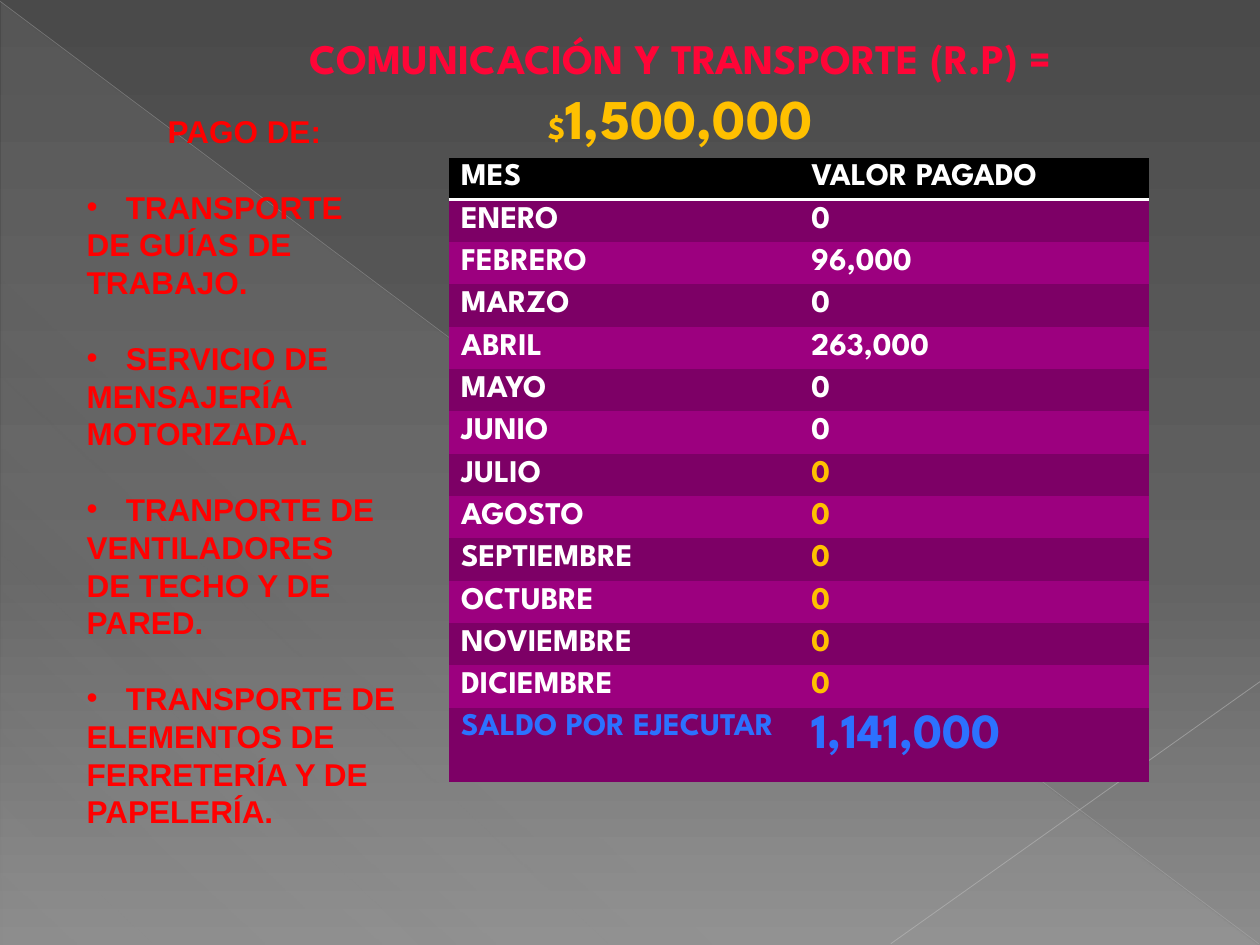
"""Build the slide on transport spending: title, payment list and month table."""
from typing import NamedTuple

from lxml import etree
from pptx import Presentation
from pptx.dml.color import RGBColor
from pptx.enum.shapes import MSO_CONNECTOR, MSO_SHAPE
from pptx.enum.text import MSO_ANCHOR, MSO_AUTO_SIZE, PP_ALIGN
from pptx.oxml.ns import qn
from pptx.util import Inches, Pt

STRAIGHT = MSO_CONNECTOR.STRAIGHT
TRIANGLE = MSO_SHAPE.RIGHT_TRIANGLE
TOP = MSO_ANCHOR.TOP
NO_FIT = MSO_AUTO_SIZE.NONE
CENTER = PP_ALIGN.CENTER
LEFT = PP_ALIGN.LEFT
HEAD_FONT = "League Spartan"
WHITE, GOLD, RED, BLUE = "FFFFFF", "FFC000", "FF0000", "2C71FF"
BLACK, DARK, LIGHT = "000000", "7D0066", "9C007F"
PLAIN_STYLE = "{2D5ABB26-0587-4C30-8999-92F81FD0307C}"
LINE_STEP = Pt(21.6)


class Stop(NamedTuple):
    pos: int
    color: str
    alpha: int = 100


class Ray(NamedTuple):
    start: tuple[float, float]
    end: tuple[float, float]
    color: str
    width: float
    alpha: int


class Row(NamedTuple):
    label: str
    value: str
    fill: str
    ink: str = WHITE
    mark: str = WHITE
    size: int = 18


BACK = [Stop(0, "4A4A4A"), Stop(60, "626262"), Stop(100, "8C8C8C")]
SHEEN = [Stop(0, "D2D2D2", 10), Stop(70, "D2D2D2", 8), Stop(100, "D2D2D2", 1)]
ROSE = [Stop(0, "FF8597"), Stop(75, "FF0537"), Stop(100, "A90042")]
RAYS = [
    Ray((0, 0.01), (9.99, 7.49), "BFBFBF", 0.39, 35),
    Ray((10, 5.41), (7.07, 7.49), "C6C6C6", 0.47, 45),
]
MONTHS = ["ENERO", "FEBRERO", "MARZO", "ABRIL", "MAYO", "JUNIO", "JULIO",
          "AGOSTO", "SEPTIEMBRE", "OCTUBRE", "NOVIEMBRE", "DICIEMBRE"]
PAID = {"FEBRERO": "96,000", "ABRIL": "263,000"}
ROWS = [
    Row("MES", "VALOR PAGADO", BLACK),
    *(Row(month, PAID.get(month, "0"), LIGHT if i % 2 else DARK,
          mark=WHITE if i < 6 else GOLD) for i, month in enumerate(MONTHS)),
    Row("SALDO POR EJECUTAR", "1,141,000", DARK, BLUE, BLUE, 28),
]
ITEMS = [
    ["TRANSPORTE", "DE GUÍAS DE", "TRABAJO."],
    ["SERVICIO DE", "MENSAJERÍA", "MOTORIZADA."],
    ["TRANPORTE DE", "VENTILADORES", "DE TECHO Y DE", "PARED."],
    ["TRANSPORTE DE", "ELEMENTOS DE", "FERRETERÍA Y DE", "PAPELERÍA."],
]


def paint(fill, color: str) -> None:
    fill.solid()
    fill.fore_color.rgb = RGBColor.from_string(color)


def fade(node, alpha: int) -> None:
    etree.SubElement(node, qn("a:alpha"), val=str(alpha * 1000))


def blend(fill, host, stops: list[Stop], angle: int) -> None:
    fill.gradient()
    fill.gradient_angle = 360 - angle
    group = next(host.iter(qn("a:gsLst")))
    for old in list(group):
        group.remove(old)
    for stop in stops:
        node = etree.SubElement(group, qn("a:gs"), pos=str(stop.pos * 1000))
        color = etree.SubElement(node, qn("a:srgbClr"), val=stop.color)
        if stop.alpha < 100:
            fade(color, stop.alpha)


def style(font, size: float, color: str, name: str = HEAD_FONT) -> None:
    font.name, font.size, font.bold = name, Pt(size), True
    paint(font.fill, color)


def add_ray(slide, ray: Ray) -> None:
    ends = [Inches(n) for n in ray.start + ray.end]
    line = slide.shapes.add_connector(STRAIGHT, *ends)
    line.line.width = Pt(ray.width)
    paint(line.line.fill, ray.color)
    props = line.element.spPr
    fade(next(props.iter(qn("a:srgbClr"))), ray.alpha)
    etree.SubElement(props, qn("a:effectLst"))


def add_back(slide) -> None:
    blend(slide.background.fill, slide.element, BACK, 90)
    sheen = slide.shapes.add_shape(
        TRIANGLE, Inches(0.01), Inches(0.02), Inches(9.98), Inches(7.48))
    sheen.shadow.inherit = False
    sheen.line.fill.background()
    blend(sheen.fill, sheen.element, SHEEN, 133)
    for ray in RAYS:
        add_ray(slide, ray)


def rule_off(cell) -> None:
    edge = etree.Element(qn("a:lnB"), w=str(Pt(2)))
    fill = etree.SubElement(edge, qn("a:solidFill"))
    etree.SubElement(fill, qn("a:srgbClr"), val=WHITE)
    cell.fill.solid()
    cell._tc.get_or_add_tcPr().insert(0, edge)


def set_cell(cell, text: str, fill: str, ink: str, size: int) -> None:
    cell.text = text
    style(cell.text_frame.paragraphs[0].font, size, ink)
    paint(cell.fill, fill)


def add_months(slide) -> None:
    frame = slide.shapes.add_table(
        len(ROWS), 2, Inches(3.56), Inches(1.25), Inches(5.56), Inches(4.96))
    table = frame.table
    next(frame.element.iter(qn("a:tableStyleId"))).text = PLAIN_STYLE
    for i, row in enumerate(ROWS):
        table.rows[i].height = Inches(4.37) // 13
        set_cell(table.cell(i, 0), row.label, row.fill, row.ink, 18)
        set_cell(table.cell(i, 1), row.value, row.fill, row.mark, row.size)
    table.rows[len(ROWS) - 1].height = Inches(0.59)
    for cell in table.rows[0].cells:
        rule_off(cell)


def add_title(slide) -> None:
    title = slide.shapes.title
    title.left, title.top = Inches(1.69), Inches(0.21)
    title.width, title.height = Inches(7.42), Inches(1.04)
    frame = title.text_frame
    frame.vertical_anchor, frame.auto_size = TOP, NO_FIT
    frame.word_wrap = True
    para = frame.paragraphs[0]
    para.alignment = CENTER
    parts = [("COMUNICACIÓN Y TRANSPORTE (R.P) = ", 24),
             ("$", 18), ("1,500,000", 32)]
    for text, size in parts:
        run = para.add_run()
        run.text = text
        style(run.font, size, GOLD)
    blend(para.runs[0].font.fill, title.element, ROSE, 90)
    title.element.getparent().append(title.element)


def add_bullet(para) -> None:
    props = para._p.get_or_add_pPr()
    props.set("marL", str(Inches(0.31)))
    props.set("indent", str(-Inches(0.31)))
    etree.SubElement(props, qn("a:buFont"), typeface="Arial")
    etree.SubElement(props, qn("a:buChar"), char="•")


def add_list(slide) -> None:
    box = slide.shapes.add_textbox(
        Inches(0.59), Inches(0.84), Inches(2.7), Inches(6.46))
    frame = box.text_frame
    frame.word_wrap = True
    head = frame.paragraphs[0]
    head.text = "PAGO DE:"
    for item in ITEMS:
        for i, text in enumerate(item):
            para = frame.add_paragraph()
            para.text = text
            if i == 0:
                para.space_before = LINE_STEP
                add_bullet(para)
    for para in frame.paragraphs:
        para.alignment = LEFT
        para.line_spacing = LINE_STEP
        style(para.font, 18, RED, "Arial")
    head.alignment = CENTER


def main() -> None:
    deck = Presentation()
    deck.slide_width, deck.slide_height = Inches(10), Inches(7.5)
    slide = deck.slides.add_slide(deck.slide_layouts[5])
    add_back(slide)
    add_months(slide)
    add_title(slide)
    add_list(slide)
    deck.save("out.pptx")


if __name__ == "__main__":
    main()
